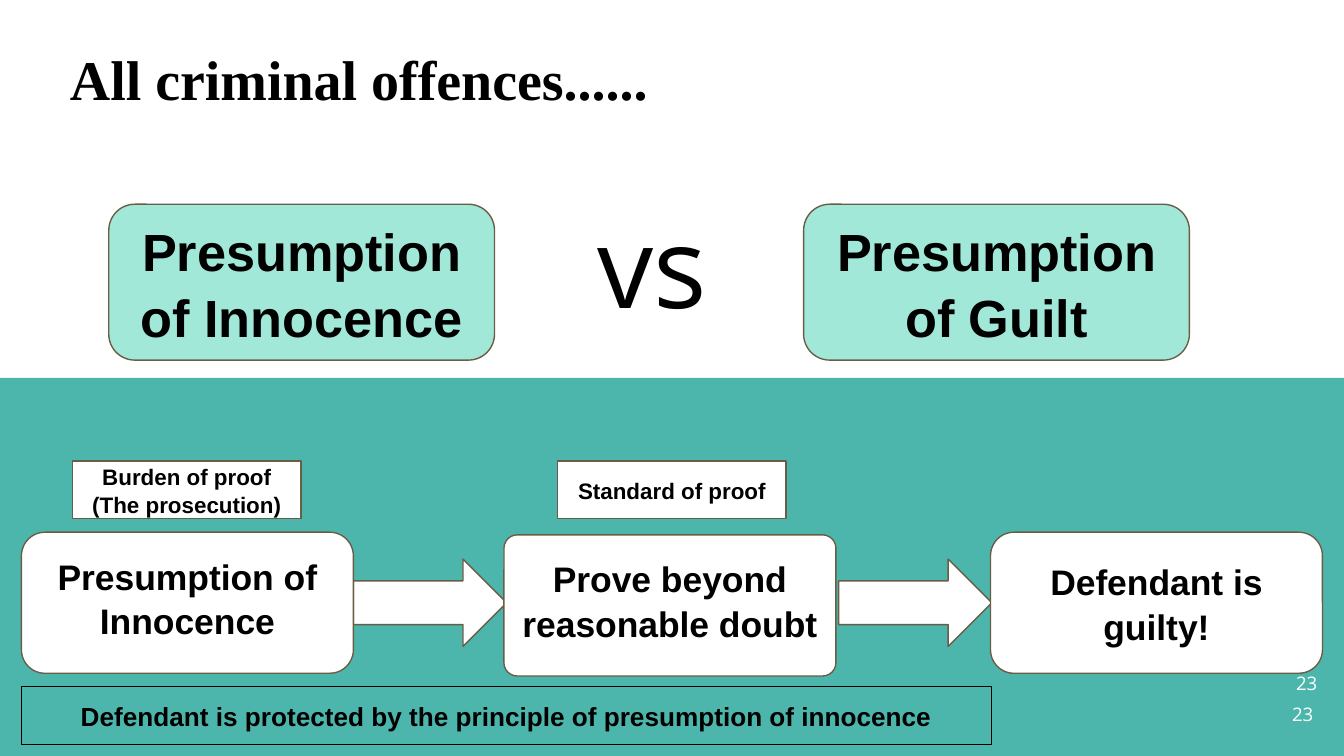
from pptx import Presentation
from pptx.dml.color import RGBColor
from pptx.enum.shapes import MSO_SHAPE as Kind
from pptx.enum.text import MSO_ANCHOR as Anchor, PP_ALIGN as Align
from pptx.util import Inches, Pt

WHITE = RGBColor(0xFF, 0xFF, 0xFF)
BLACK = RGBColor(0, 0, 0)
TEAL = RGBColor(0x4D, 0xB6, 0xAC)
MINT = RGBColor(0xA1, 0xE8, 0xD9)
BROWN = RGBColor(0x69, 0x5D, 0x46)
COLS, ROWS = 100, 56.25
CELL = 0.1


def span(*cells):
    return [Inches(cell * CELL) for cell in cells]


def write(shape, text, size=19, font="Arial", color=BLACK, bold=True,
          align=Align.CENTER, anchor=Anchor.MIDDLE, top=1, base=1, lead=1.05):
    frame = shape.text_frame
    frame.word_wrap = True
    frame.vertical_anchor = anchor
    frame.margin_left = frame.margin_right = Inches(CELL)
    frame.margin_top, frame.margin_bottom = span(top, base)
    line = frame.paragraphs[0]
    line.alignment = align
    line.line_spacing = lead
    run = line.add_run()
    run.text = text
    run.font.size = Pt(size)
    run.font.name = font
    run.font.bold = bold
    run.font.color.rgb = color


class Deck:
    def __init__(self):
        self.show = Presentation()
        self.show.slide_width, self.show.slide_height = span(COLS, ROWS)
        self.slide = self.show.slides.add_slide(self.show.slide_layouts[5])

    def title(self, text, x, y, w, h):
        head = self.slide.shapes.title
        head.left, head.top, head.width, head.height = span(x, y, w, h)
        write(head, text, size=30, font="Times New Roman", align=Align.LEFT,
              anchor=Anchor.TOP, lead=1.15)

    def shape(self, kind, x, y, w, h, fill=WHITE, edge=BROWN, bend=None):
        form = self.slide.shapes.add_shape(kind, *span(x, y, w, h))
        form.shadow.inherit = False
        form.fill.solid()
        form.fill.fore_color.rgb = fill
        if edge is None:
            form.line.fill.background()
        else:
            form.line.color.rgb = edge
            form.line.width = Pt(0.75)
        if bend is not None:
            form.adjustments[0] = bend
        return form

    def card(self, text, x, y, w, h, fill=WHITE, bend=0.167, **style):
        form = self.shape(Kind.ROUNDED_RECTANGLE, x, y, w, h, fill, bend=bend)
        write(form, text, **style)

    def tag(self, text, x, y, w, h, fill=WHITE, edge=BROWN, size=12):
        form = self.shape(Kind.RECTANGLE, x, y, w, h, fill, edge)
        write(form, text, size=size, top=0, base=0)

    def arrow(self, x, y, w, h):
        self.shape(Kind.RIGHT_ARROW, x, y, w, h)

    def label(self, text, x, y, w, h, **style):
        box = self.slide.shapes.add_textbox(*span(x, y, w, h))
        write(box, text, font="Open Sans", bold=False, lead=1, **style)


def main():
    deck = Deck()
    half = ROWS / 2
    deck.shape(Kind.RECTANGLE, 0, half, COLS, half, TEAL, None)
    deck.title("All criminal offences......", 4.2, 1.6, 81.9, 10)

    for x, text in ((8.1, "Presumption of Innocence"),
                    (59.8, "Presumption of Guilt")):
        deck.card(text, x, 15.2, 28.7, 11.6, MINT, size=28)
    deck.label("vs", 43.5, 13.6, 12, 12, size=60, align=Align.LEFT,
               anchor=Anchor.TOP)

    for x, text in ((5.4, "Burden of proof (The prosecution)"),
                    (41.5, "Standard of proof")):
        deck.tag(text, x, 34.3, 17, 4.3)

    for x in (26.3, 62.4):
        deck.arrow(x, 41.6, 11.4, 6.5)
    for x, y, text, bend, base in (
            (1.6, 39.6, "Presumption of Innocence", 0.167, 1.8),
            (37.5, 39.8, "Prove beyond reasonable doubt", 0.094, 1.8),
            (73.7, 39.6, "Defendant is guilty!", 0.167, 1)):
        deck.card(text, x, y, 24.7, 10.5, bend=bend, base=base)

    deck.tag("Defendant is protected by the principle of presumption of "
             "innocence", 1.6, 51.1, 72.2, 4.3, TEAL, BLACK, 14)
    for x, y in ((92.7, 51), (93, 48.7)):
        deck.label("23", x, y, 6, 4.3, size=10, color=WHITE,
                   align=Align.RIGHT)
    deck.show.save("out.pptx")


if __name__ == "__main__":
    main()
